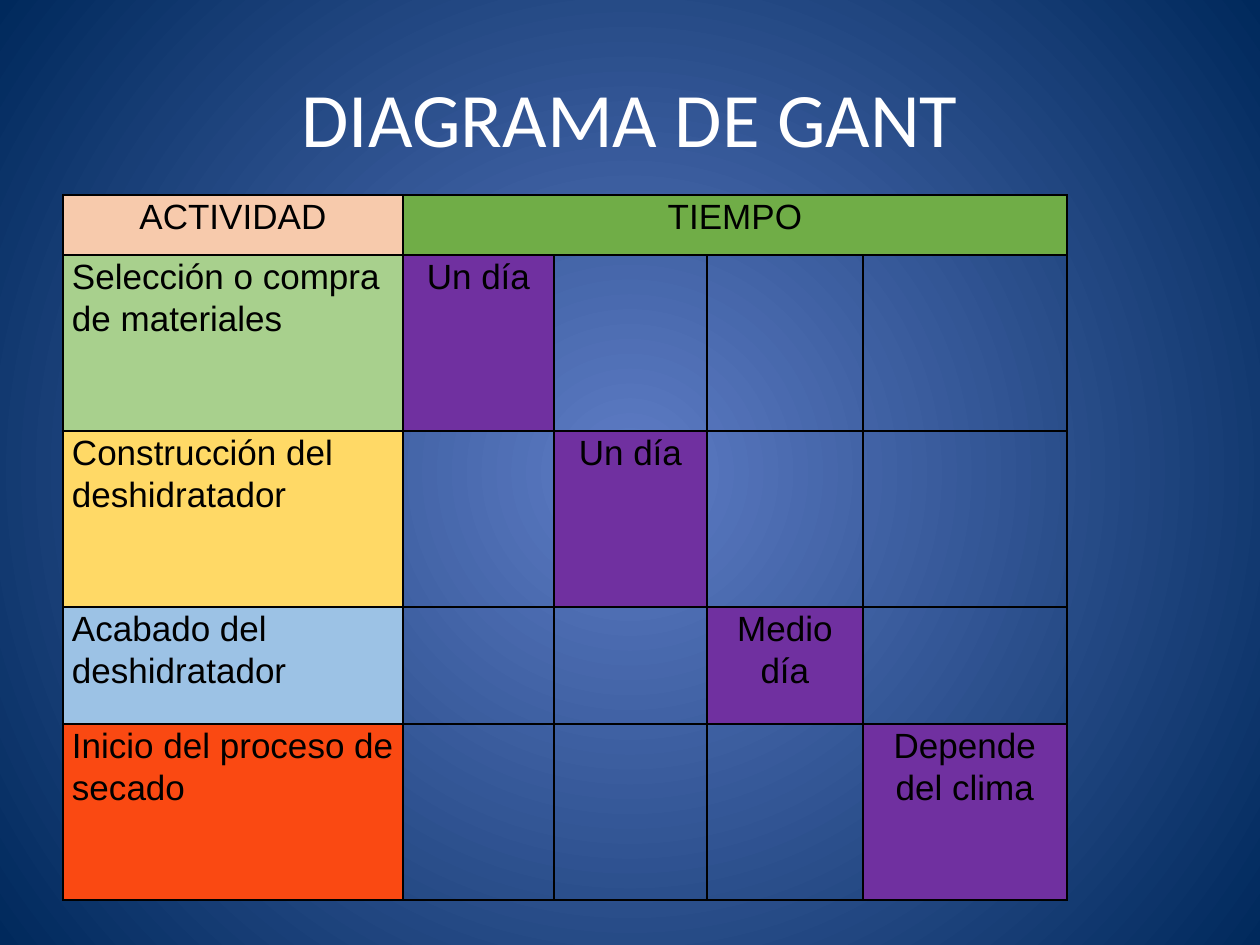
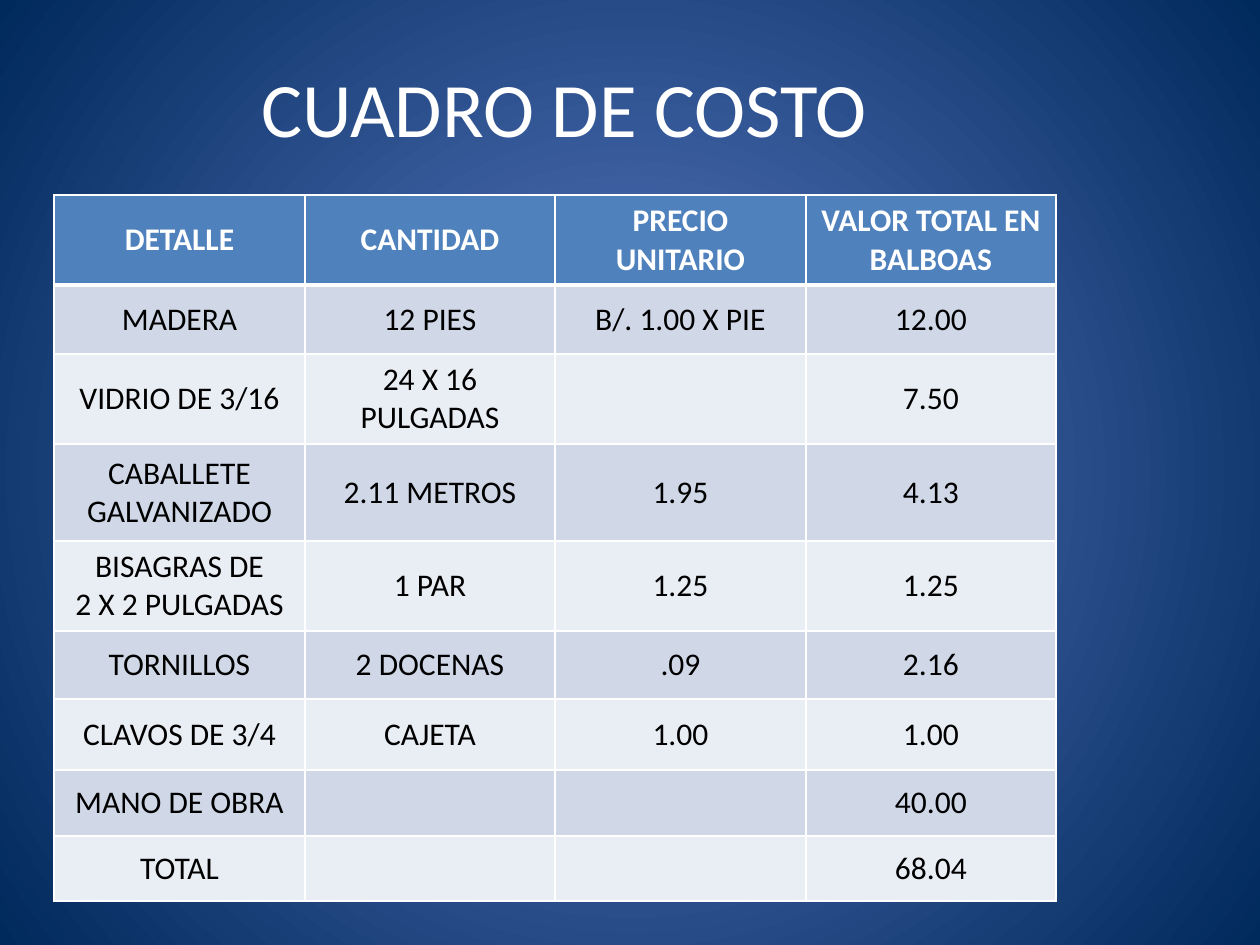
from dataclasses import dataclass

from lxml import etree
from pptx import Presentation
from pptx import util as u
from pptx.dml import color
from pptx.enum import text
from pptx.oxml import ns

EMU_PER_PX = 914400 / 126


@dataclass(frozen=True)
class Theme:
    glow: str = "5E7CC5"
    edge: str = "00295C"
    white: str = "FFFFFF"
    black: str = "000000"
    activity: str = "F7CAAC"
    time: str = "70AD47"
    bar: str = "7030A0"
    cost_header: str = "4F81BD"
    cost_bands: tuple = ("D0D8E8", "E9EDF4")
    title_font: str = "Calibri"
    gantt_font: str = "Arial"
    title_size: int = 44
    gantt_size: int = 20
    cost_size: int = 18
    thin: int = 1
    thick: int = 3


THEME = Theme()
CENTER, LEFT = text.PP_ALIGN.CENTER, text.PP_ALIGN.LEFT

# Activity, row colour, duration; each step starts where the last one ends.
ACTIVITIES = [
    ("Selección o compra de materiales", "A8D08D", "Un día"),
    ("Construcción del deshidratador", "FFD966", "Un día"),
    ("Acabado del deshidratador", "9CC2E5", "Medio día"),
    ("Inicio del proceso de secado", "FA4912", "Depende del clima"),
]

COSTS = [
    ("DETALLE", "CANTIDAD", "PRECIO UNITARIO", "VALOR TOTAL EN BALBOAS"),
    ("MADERA", "12 PIES", "B/. 1.00 X PIE", "12.00"),
    ("VIDRIO DE 3/16", "24 X 16 PULGADAS", "", "7.50"),
    ("CABALLETE GALVANIZADO", "2.11 METROS", "1.95", "4.13"),
    ("BISAGRAS DE\v2 X 2 PULGADAS", "1 PAR", "1.25", "1.25"),
    ("TORNILLOS", "2 DOCENAS", ".09", "2.16"),
    ("CLAVOS DE 3/4", "CAJETA", "1.00", "1.00"),
    ("MANO DE OBRA", "", "", "40.00"),
    ("TOTAL", "", "", "68.04"),
]


def px(length):
    return u.Emu(round(length * EMU_PER_PX))


def rgb(value):
    return color.RGBColor.from_string(value)


def style_paragraph(paragraph, font, size, ink, align=CENTER, bold=False):
    paragraph.alignment = align
    paragraph.font.name = font
    paragraph.font.size = u.Pt(size)
    paragraph.font.color.rgb = rgb(ink)
    paragraph.font.bold = bold


def add_slide(presentation):
    """Add a blank slide with the shared radial background."""
    slide = presentation.slides.add_slide(presentation.slide_layouts[6])
    fill = slide.background.fill
    fill.gradient()
    for stop, position, shade in zip(fill.gradient_stops, (0, 1), (THEME.glow, THEME.edge)):
        stop.position = position
        stop.color.rgb = rgb(shade)
    linear = slide.element.find(".//" + ns.qn("a:lin"))
    gradient = linear.getparent()
    gradient.remove(linear)
    radial = etree.SubElement(gradient, ns.qn("a:path"), path="circle")
    etree.SubElement(radial, ns.qn("a:fillToRect"), dict.fromkeys("ltrb", "50000"))
    return slide


def add_title(slide, title, width, height):
    frame = slide.shapes.add_textbox(px(63), px(38), px(width), px(height)).text_frame
    frame.word_wrap = True
    frame.vertical_anchor = text.MSO_ANCHOR.MIDDLE
    frame.text = title
    style_paragraph(frame.paragraphs[0], THEME.title_font, THEME.title_size, THEME.white)


def add_table(slide, left, top, columns, rows):
    shape = slide.shapes.add_table(len(rows), len(columns), px(left), px(top),
                                   px(sum(columns)), px(sum(rows)))
    table = shape.table
    table.first_row = table.horz_banding = False
    for column, width in zip(table.columns, columns):
        column.width = px(width)
    for row, height in zip(table.rows, rows):
        row.height = px(height)
    return table


def set_borders(cell, ink, **widths):
    """Draw all four sides thin, except those named (L, R, T, B) with a width."""
    properties = cell._tc.get_or_add_tcPr()
    for side in "LRTB":
        width = u.Pt(widths.get(side, THEME.thin))
        line = etree.SubElement(properties, ns.qn("a:ln" + side), w=str(width))
        solid = etree.SubElement(line, ns.qn("a:solidFill"))
        etree.SubElement(solid, ns.qn("a:srgbClr"), val=ink)


def fill_cell(cell, shade):
    cell.fill.solid()
    cell.fill.fore_color.rgb = rgb(shade)


def write_gantt_cell(cell, words, shade, align=CENTER):
    fill_cell(cell, shade)
    cell.text = words
    paragraph = cell.text_frame.paragraphs[0]
    paragraph.line_spacing = 1.07
    style_paragraph(paragraph, THEME.gantt_font, THEME.gantt_size, THEME.black, align)


def add_gantt(slide):
    table = add_table(slide, 63, 195, [340, 151, 153, 156, 204], [60, 176, 176, 117, 176])
    for cell in table.iter_cells():
        set_borders(cell, THEME.black)
        cell.fill.background()
        cell.margin_left = cell.margin_right = px(9)
        cell.margin_top = cell.margin_bottom = 0
    table.cell(0, 1).merge(table.cell(0, 4))
    write_gantt_cell(table.cell(0, 0), "ACTIVIDAD", THEME.activity)
    write_gantt_cell(table.cell(0, 1), "TIEMPO", THEME.time)
    for step, (activity, shade, duration) in enumerate(ACTIVITIES, start=1):
        write_gantt_cell(table.cell(step, 0), activity, shade, LEFT)
        write_gantt_cell(table.cell(step, step), duration, THEME.bar)


def add_costs(slide):
    table = add_table(slide, 54, 195, [251, 250, 251, 250],
                      [90, 69, 90, 97, 90, 68, 71, 66, 65])
    heavy_sides = {0: {"B": THEME.thick}, 1: {"T": THEME.thick}}
    for row, values in enumerate(COSTS):
        header = row == 0
        shade = THEME.cost_header if header else THEME.cost_bands[(row - 1) % 2]
        ink = THEME.white if header else THEME.black
        for column, value in enumerate(values):
            cell = table.cell(row, column)
            set_borders(cell, THEME.white, **heavy_sides.get(row, {}))
            fill_cell(cell, shade)
            cell.vertical_anchor = text.MSO_ANCHOR.MIDDLE
            cell.text = value
            style_paragraph(cell.text_frame.paragraphs[0], THEME.title_font,
                            THEME.cost_size, ink, bold=header)


def main():
    presentation = Presentation()
    presentation.slide_width, presentation.slide_height = px(1260), px(945)

    gantt_slide = add_slide(presentation)
    add_title(gantt_slide, "DIAGRAMA DE GANT", 1134, 158)
    add_gantt(gantt_slide)

    cost_slide = add_slide(presentation)
    add_title(cost_slide, "CUADRO DE COSTO", 1003, 137)
    add_costs(cost_slide)

    presentation.save("out.pptx")


if __name__ == "__main__":
    main()
